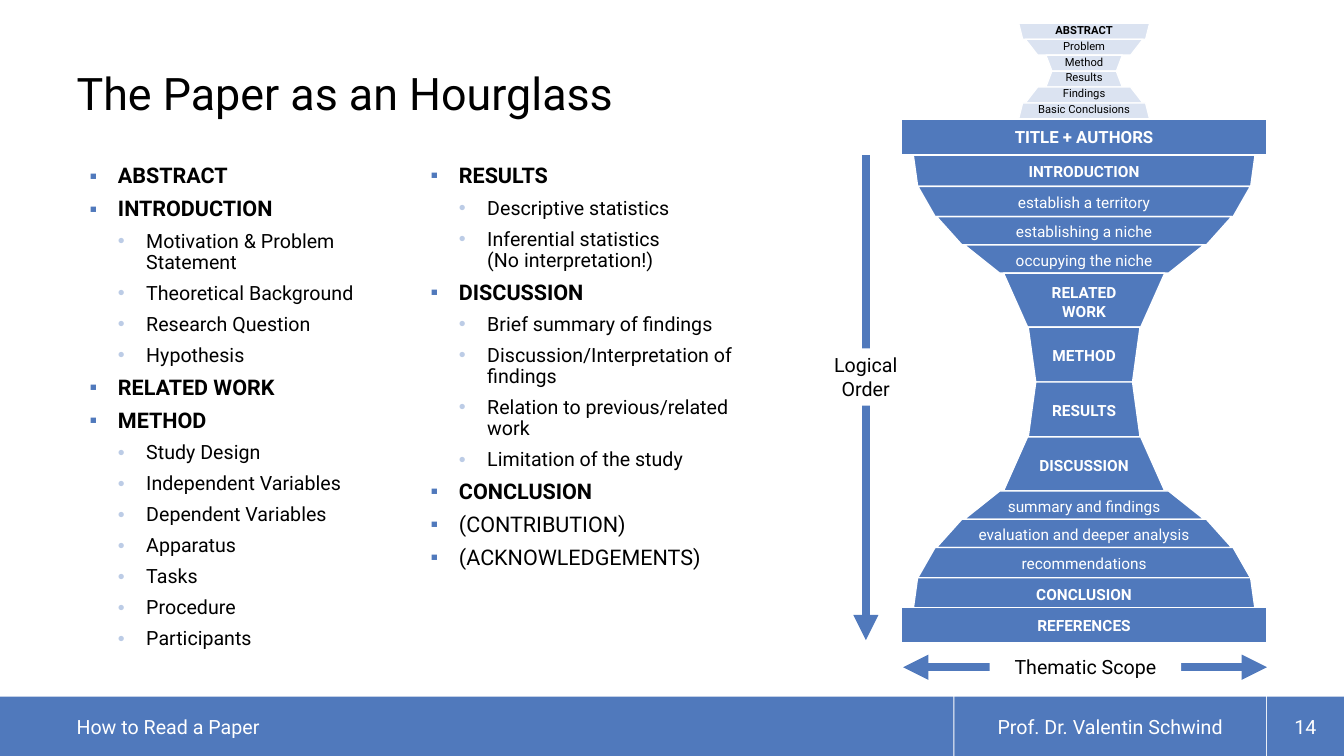
from dataclasses import dataclass

import pptx
import pptx.dml.color
import pptx.enum.shapes
import pptx.enum.text
import pptx.oxml
import pptx.oxml.ns
import pptx.util
from lxml import etree

Pt = pptx.util.Pt
Shape = pptx.enum.shapes.MSO_SHAPE
Align = pptx.enum.text.PP_ALIGN
Anchor = pptx.enum.text.MSO_ANCHOR
qn = pptx.oxml.ns.qn

FONT = "Roboto"
BLUE, PALE, LIGHT, WHITE, BLACK = "5079BC", "DBE3F1", "BCCCE6", "FFFFFF", "000000"
CENTER = 774.4  # axis of the hourglass


@dataclass(frozen=True)
class Style:
    size: float
    color: str = BLACK
    bold: bool = False
    align: Align = Align.CENTER


@dataclass(frozen=True)
class Band:
    text: str
    label_width: float
    width: float
    height: float
    slant: float
    bold: bool = False


@dataclass(frozen=True)
class Item:
    text: str
    level: int = 1
    bold: bool = False


ABSTRACT = [
    Band("ABSTRACT", 48, 93.6, 11.4, 0.25, True),
    Band("Problem", 90.7, 84.2, 11.4, 0.78),
    Band("Method", 36, 54.7, 11.4, 0.38),
    Band("Results", 36, 54.7, 11.4, 0.38),
    Band("Findings", 40, 84.2, 11.4, 0.78),
    Band("Basic Conclusions", 76, 93.6, 11.4, 0.25),
]
HOURGLASS = [
    Band("INTRODUCTION", 93.6, 244.1, 22.2, 0.139, True),
    Band("establish a territory", 114, 237.6, 21.6, 0.571),
    Band("establishing a niche", 116, 211, 20.2, 0.898),
    Band("occupying the niche", 118, 171.4, 20.2, 1.256),
    Band("RELATED\nWORK", 66, 115.2, 38.6, 0.445, True),
    Band("METHOD", 66, 79.9, 39.2, 0.137, True),
    Band("RESULTS", 66, 79.9, 39.2, 0.137, True),
    Band("DISCUSSION", 84, 115.2, 38.6, 0.445, True),
    Band("summary and findings", 134, 171.4, 20.2, 1.256),
    Band("evaluation and deeper analysis", 172, 211, 20.2, 0.898),
    Band("recommendations", 112, 237.6, 21.6, 0.571),
    Band("CONCLUSION", 88, 244.1, 22.2, 0.139, True),
]
LEFT_LIST = [
    Item("ABSTRACT", 0, True),
    Item("INTRODUCTION", 0, True),
    Item("Motivation & Problem Statement"),
    Item("Theoretical Background"),
    Item("Research Question"),
    Item("Hypothesis"),
    Item("RELATED WORK", 0, True),
    Item("METHOD", 0, True),
    Item("Study Design"),
    Item("Independent Variables"),
    Item("Dependent Variables"),
    Item("Apparatus"),
    Item("Tasks"),
    Item("Procedure"),
    Item("Participants"),
]
RIGHT_LIST = [
    Item("RESULTS", 0, True),
    Item("Descriptive statistics"),
    Item("Inferential statistics\n(No interpretation!)"),
    Item("DISCUSSION", 0, True),
    Item("Brief summary of findings"),
    Item("Discussion/Interpretation of findings"),
    Item("Relation to previous/related work"),
    Item("Limitation of the study"),
    Item("CONCLUSION", 0, True),
    Item("(CONTRIBUTION)", 0),
    Item("(ACKNOWLEDGEMENTS)", 0),
]


def rgb(color: str) -> pptx.dml.color.RGBColor:
    return pptx.dml.color.RGBColor.from_string(color)


def add_runs(p, text: str, style: Style) -> None:
    p.alignment = style.align
    for i, line in enumerate(text.split("\n")):
        if i:
            p.add_line_break()
        r = p.add_run()
        r.text = line
        r.font.name, r.font.size, r.font.bold = FONT, Pt(style.size), style.bold
        r.font.color.rgb = rgb(style.color)


def set_frame(sp, anchor: Anchor, insets: tuple | None = None, wrap: bool = True):
    tf = sp.text_frame
    tf.word_wrap, tf.vertical_anchor = wrap, anchor
    if insets:
        tf.margin_left, tf.margin_top, tf.margin_right, tf.margin_bottom = map(Pt, insets)
    return tf


def add_box(shapes, kind: Shape, x: float, y: float, w: float, h: float, fill: str, outlined: bool = False):
    sp = shapes.add_shape(kind, Pt(x), Pt(y), Pt(w), Pt(h))
    sp.shadow.inherit = False
    sp.fill.solid()
    sp.fill.fore_color.rgb = rgb(fill)
    if outlined:
        sp.line.color.rgb = rgb(WHITE)
        sp.line.width = Pt(1)
    else:
        sp.line.fill.background()
    return sp


def add_label(shapes, text: str, y: float, w: float, h: float, style: Style, insets: tuple | None = None) -> None:
    """Text box centred on the hourglass axis."""
    sp = shapes.add_textbox(Pt(CENTER - w / 2), Pt(y), Pt(w), Pt(h))
    add_runs(set_frame(sp, Anchor.TOP, insets, False).paragraphs[0], text, style)


def add_bands(shapes, bands: list[Band], top: float, fill: str) -> float:
    """Stack trapezoids, the upper half upside down, and return the bottom edge."""
    for i, band in enumerate(bands):
        sp = add_box(shapes, Shape.TRAPEZOID, CENTER - band.width / 2, top, band.width, band.height, fill, True)
        sp.adjustments[0] = band.slant
        sp.rotation = 180 if i < len(bands) / 2 else 0
        top += band.height
    return top


def add_list(shapes, items: list[Item], x: float, w: float, h: float) -> None:
    sp = shapes.add_textbox(Pt(x), Pt(114.5), Pt(w), Pt(h))
    tf = set_frame(sp, Anchor.TOP)
    for i, item in enumerate(items):
        p = tf.paragraphs[0] if i == 0 else tf.add_paragraph()
        p.level, p.line_spacing, p.space_after = item.level, 0.9, Pt(4)
        p.space_before = Pt(3 if i else 0)
        pPr = p._p.get_or_add_pPr()
        pPr.set("marL", str(Pt((22.3, 42.5)[item.level])))
        pPr.set("indent", str(Pt(-20.2)))
        color = etree.SubElement(pPr, qn("a:buClr"))
        etree.SubElement(color, qn("a:srgbClr"), val=(BLUE, LIGHT)[item.level])
        etree.SubElement(pPr, qn("a:buFont"), typeface="Arial")
        etree.SubElement(pPr, qn("a:buChar"), char="▪•"[item.level])
        add_runs(p, item.text, Style((15.4, 14)[item.level], BLACK, item.bold, Align.LEFT))


def add_arrow(shapes, x1: float, y1: float, x2: float, y2: float, ends: tuple[str, ...]) -> None:
    cxn = shapes.add_connector(pptx.enum.shapes.MSO_CONNECTOR.STRAIGHT, Pt(x1), Pt(y1), Pt(x2), Pt(y2))
    cxn.line.color.rgb = rgb(BLUE)
    cxn.line.width = Pt(6)
    ln = cxn.line._get_or_add_ln()
    for end in ends:
        etree.SubElement(ln, qn(f"a:{end}"), type="triangle")
    etree.SubElement(cxn._element.spPr, qn("a:effectLst"))


def main() -> None:
    prs = pptx.Presentation()
    prs.slide_width, prs.slide_height = Pt(960), Pt(540)
    shapes = prs.slides.add_slide(prs.slide_layouts[6]).shapes

    for text, x, w, inset, align in (
        ("How to Read a Paper", 0, 681.1, 54.7, Align.LEFT),
        ("Prof. Dr. Valentin Schwind", 681.8, 222.5, 0, Align.CENTER),
        ("14", 905, 55, 0, Align.CENTER),
    ):
        sp = add_box(shapes, Shape.RECTANGLE, x, 497.5, w, 42.5, BLUE)
        tf = set_frame(sp, Anchor.MIDDLE, (inset, 0, 0, 0))
        add_runs(tf.paragraphs[0], text, Style(14, WHITE, align=align))

    title = shapes.add_textbox(Pt(54.7), Pt(9.4), Pt(850.3), Pt(76.3))
    p = set_frame(title, Anchor.BOTTOM, (0, 0, 0, 0)).paragraphs[0]
    p.line_spacing = 0.9
    add_runs(p, "The Paper as an Hourglass", Style(32, align=Align.LEFT))

    add_list(shapes, LEFT_LIST, 54.9, 242.6, 368.6)
    add_list(shapes, RIGHT_LIST, 298.5, 240.5, 319.7)

    add_bands(shapes, ABSTRACT, 16.6, PALE)
    for i, band in enumerate(ABSTRACT):
        add_label(shapes, band.text, 16.6 + 11.3 * i, band.label_width, 9.4, Style(8, bold=band.bold), (0, 0, 0, 0))

    bottom = add_bands(shapes, HOURGLASS, 110.9, BLUE)
    y = 110.9
    for band in HOURGLASS:
        h = 19.4 + 12.6 * band.text.count("\n")
        add_label(shapes, band.text, y + (band.height - h) / 2 + 0.3, band.label_width, h, Style(11, WHITE, band.bold))
        y += band.height

    for text, top, size in (("TITLE + AUTHORS", 85.4, 12), ("REFERENCES", bottom - 0.8, 11)):
        sp = add_box(shapes, Shape.RECTANGLE, 643.7, top, 261.4, 25.2, BLUE, True)
        add_runs(set_frame(sp, Anchor.MIDDLE).paragraphs[0], text, Style(size, WHITE, True))

    add_arrow(shapes, 618.5, 110.9, 618.5, 457.2, ("tailEnd",))
    add_arrow(shapes, 905, 476.6, 645.1, 476.6, ("headEnd", "tailEnd"))
    for text, x, y, w, h in (
        ("Logical\nOrder", 573.1, 248.8, 90.7, 41),
        ("Thematic Scope", 707, 464.6, 136.8, 24.5),
    ):
        sp = add_box(shapes, Shape.RECTANGLE, x, y, w, h, WHITE)
        add_runs(set_frame(sp, Anchor.TOP).paragraphs[0], text, Style(14))

    prs.save("out.pptx")


if __name__ == "__main__":
    main()
